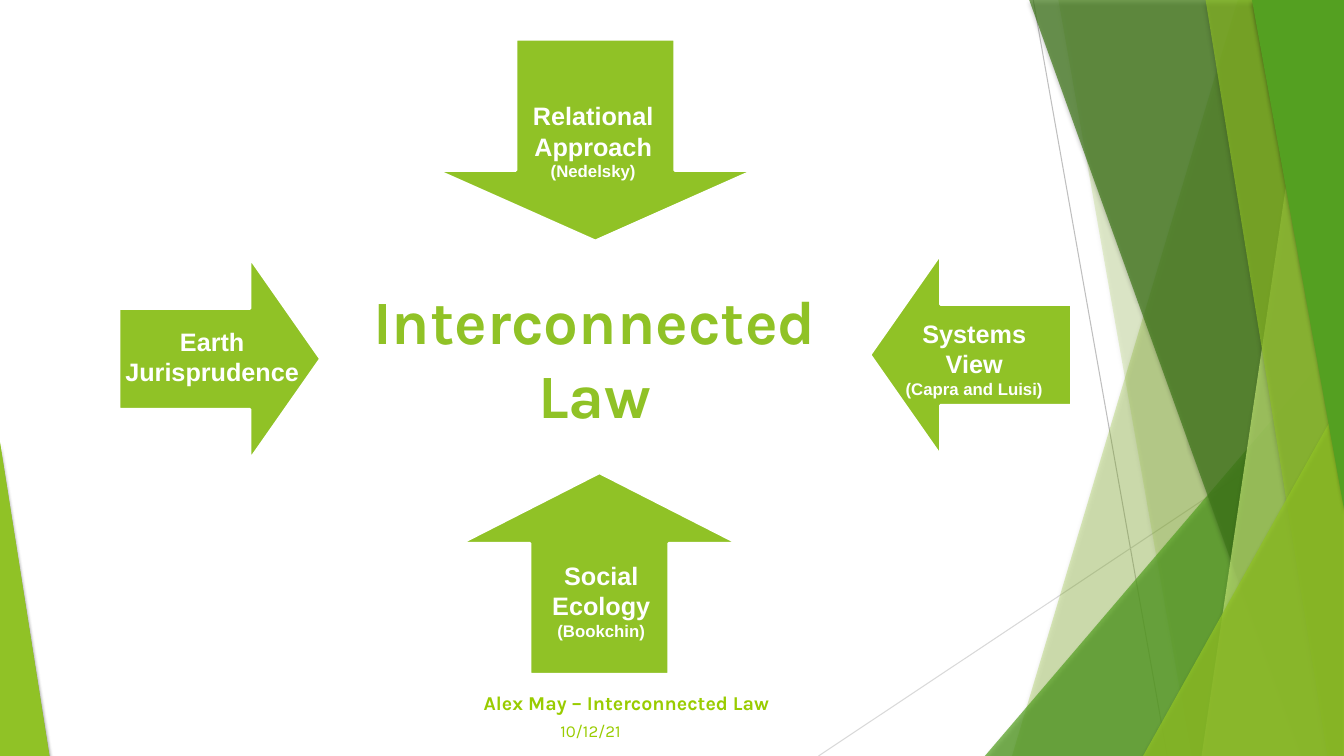
"""Build the Interconnected Law slide: four arrows pointing at a central title."""
import pptx
import pptx.util
import pptx.dml.color
import pptx.enum.shapes
import pptx.enum.text
import pptx.oxml
import pptx.oxml.ns
import pptx.oxml.xmlchemy

Pt = pptx.util.Pt
RGB = pptx.dml.color.RGBColor.from_string
KIND = pptx.enum.shapes.MSO_SHAPE
ALIGN = pptx.enum.text.PP_ALIGN
qn = pptx.oxml.ns.qn
make = pptx.oxml.xmlchemy.OxmlElement
HUE = {"lime": "90C226", "green": "54A021", "dark": "3F7819", "pale": "C0E474",
       "foot": "99CC00", "white": "FFFFFF", "grey": "BFBFBF", "light": "D9D9D9"}
SHADOW = ('<a:outerShdw %s blurRad="38100" dist="25400" dir="5400000" rotWithShape="0">'
          '<a:srgbClr val="000000"><a:alpha val="35000"/></a:srgbClr></a:outerShdw>'
          % pptx.oxml.ns.nsdecls("a"))

deck = pptx.Presentation()
deck.slide_width = pptx.util.Inches(13.33)
deck.slide_height = pptx.util.Inches(7.5)
slide = deck.slides.add_slide(deck.slide_layouts[5])
shapes = slide.shapes


def place(left, top, width, height):
    """Turn percentages of the slide into lengths."""
    col, row = deck.slide_width / 100, deck.slide_height / 100
    return [round(n) for n in (left * col, top * row, width * col, height * row)]


def style(run, font, size, hue, bold=True):
    """Format one run of text."""
    run.font.name = font
    run.font.size = Pt(size)
    run.font.bold = bold
    run.font.color.rgb = RGB(HUE[hue])


for hue, ends in (("grey", (76.88, 0, 86.85, 100)), ("light", (100, 53.73, 60.9, 100))):
    line = shapes.add_connector(pptx.enum.shapes.MSO_CONNECTOR.STRAIGHT, *place(*ends))
    line.line.color.rgb = RGB(HUE[hue])
    line.line.width = Pt(0.75)
    line._element.spPr.append(make("a:effectLst"))

facets = [
    ("lime", 30, (92.1, 75.3), 0, 0),
    ("lime", 20, (78.75, 88.65), 0, 0),
    ("green", 72, (73.28, 44.4, 26.72, 55.6), 1, 0),
    ("dark", 70, (76.58, 96.83), 0, 0),
    ("pale", 70, (97.73, 89.4), 0, 0),
    ("lime", 65, (89.7, 98.78), 0, 0),
    ("lime", 80, (85.05, 52.4, 14.95, 47.6), 1, 0),
    ("lime", 85, (0, 58.53, 3.68, 41.47), 0, 0),
    ("lime", 100, (0, 58.53, 3.68, 41.47), 0, 0),
    ("green", 100, (93.15, 0, 6.85, 67.33), 0, 180),
]
for hue, alpha, spot, peak, turn in facets:
    if len(spot) == 2:
        top, base = spot
        left, high, right, low = place(top, 0, 100, 100)
        foot = place(base, 0, 0, 0)[0]
        pen = shapes.build_freeform(left, high)
        pen.add_line_segments([(right, high), (right, low), (foot, low)], close=True)
        facet = pen.convert_to_shape()
    else:
        facet = shapes.add_shape(KIND.ISOSCELES_TRIANGLE, *place(*spot))
        facet.adjustments[0] = peak
        facet.rotation = turn
    facet.fill.solid()
    facet.fill.fore_color.rgb = RGB(HUE[hue])
    facet.line.fill.background()
    facet.shadow.inherit = False
    props = facet._element.spPr
    props.find(qn("a:effectLst")).append(pptx.oxml.parse_xml(SHADOW))
    if alpha < 100:
        fade = make("a:alpha")
        fade.set("val", str(alpha * 1000))
        props.find(qn("a:solidFill")).find(qn("a:srgbClr")).append(fade)

title = shapes.title
title.left, title.top, title.width, title.height = place(26.55, 31.47, 35.4, 31.47)
frame = title.text_frame
frame.text = "Interconnected Law"
frame.word_wrap = True
frame.auto_size = pptx.enum.text.MSO_AUTO_SIZE.NONE
frame.vertical_anchor = pptx.enum.text.MSO_ANCHOR.MIDDLE
frame.paragraphs[0].alignment = ALIGN.CENTER
frame.paragraphs[0].space_after = Pt(6)
style(frame.paragraphs[0].runs[0], "Karla", 44, "lime")

arrows = [(32.48, 5.2, 23.63), (64.73, 33.6, 15), (34.28, 62.53, 20.63), (8.85, 34.13, 15)]
for step, (left, top, width) in enumerate(arrows):
    arrow = shapes.add_shape(KIND.DOWN_ARROW, *place(left, top, width, 26.67))
    arrow.adjustments[0] = 0.5
    arrow.adjustments[1] = 0.35
    arrow.rotation = 90 * step
    arrow.fill.solid()
    arrow.fill.fore_color.rgb = RGB(HUE["lime"])
    arrow.line.color.rgb = RGB(HUE["white"])
    arrow.line.width = Pt(2)
    arrow.shadow.inherit = False

feet = [("10/12/21", (40.95, 94.67, 22.5, 5.33), 12, False),
        ("Alex May – Interconnected Law", (35.25, 90.67, 25.43, 5.33), 14, True)]
for words, spot, size, bold in feet:
    frame = shapes.add_textbox(*place(*spot)).text_frame
    frame.word_wrap = True
    frame.text = words
    style(frame.paragraphs[0].runs[0], "Karla", size, "foot", bold)

labels = [("Earth Jurisprudence", 8.4, 42.53),
          ("Relational Approach\v(Nedelsky)", 36.75, 12.67),
          ("Social\vEcology\v(Bookchin)", 37.35, 73.47),
          ("Systems\vView\v(Capra and Luisi)", 65.1, 41.47)]
for words, left, top in labels:
    frame = shapes.add_textbox(*place(left, top, 14.78, 8.8)).text_frame
    frame.word_wrap = True
    para = frame.paragraphs[0]
    para.text = words
    para.alignment = ALIGN.CENTER
    for run in para.runs:
        style(run, "Arial", 12 if run.text.startswith("(") else 18, "white")

deck.save("out.pptx")
